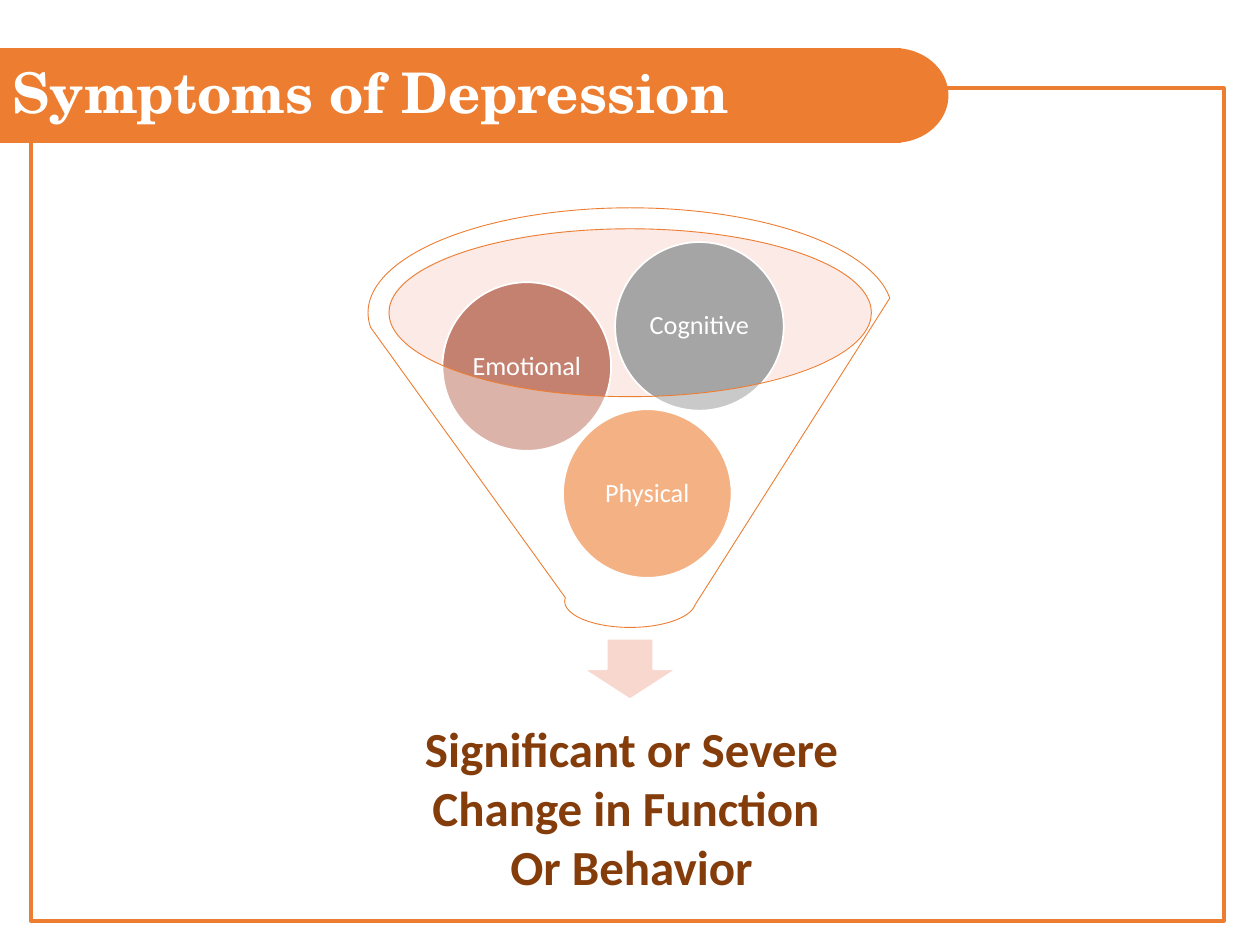
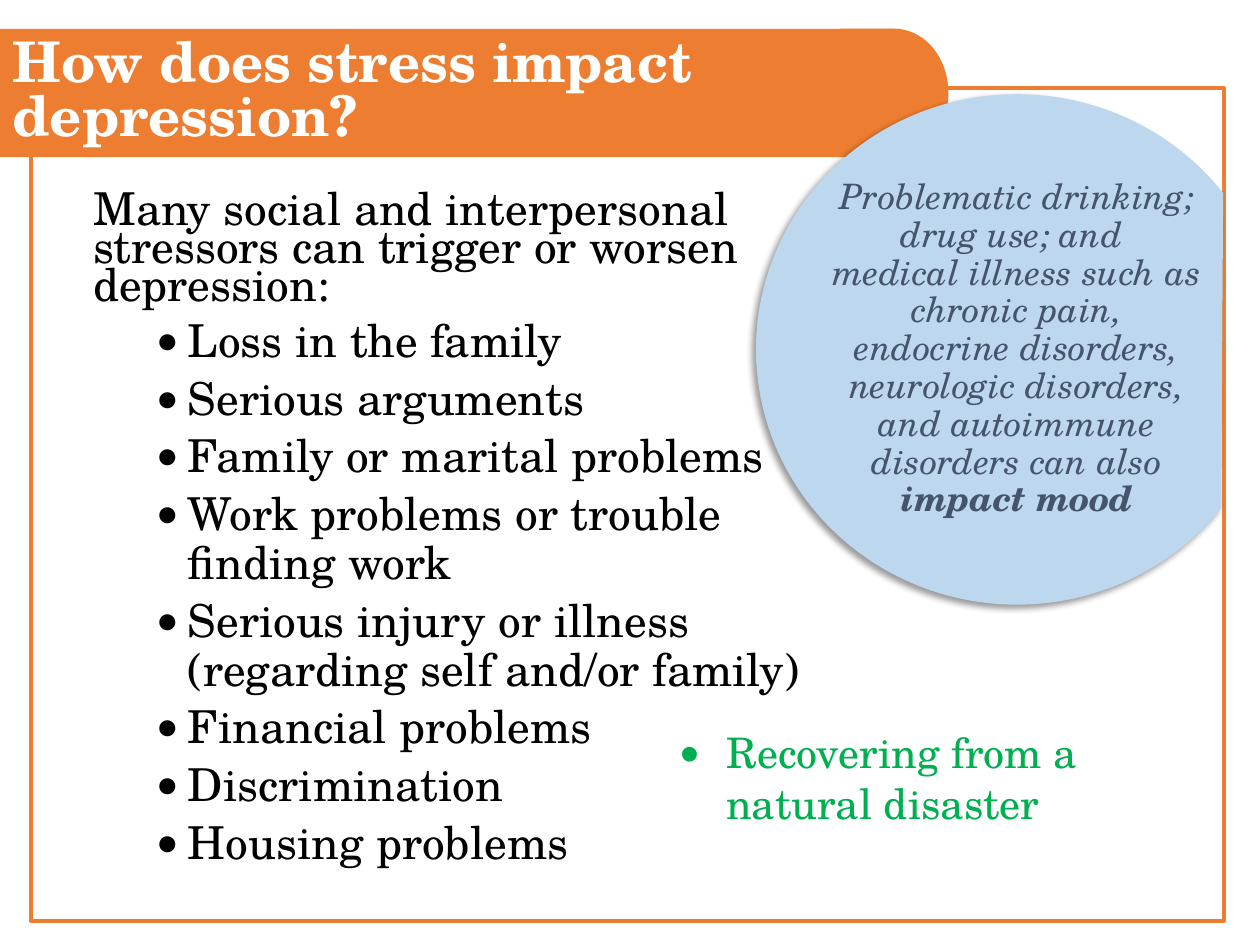
from dataclasses import dataclass
from typing import NamedTuple, Optional

from lxml import etree
from pptx import Presentation
from pptx import util as u
from pptx.dml.color import RGBColor
from pptx.enum import shapes, text
from pptx.oxml import ns

WHITE = RGBColor(0xFF, 0xFF, 0xFF)
BLACK = RGBColor(0x00, 0x00, 0x00)
ORANGE = RGBColor(0xED, 0x7D, 0x31)
ROSE = RGBColor(0xC4, 0x81, 0x70)
GRAY = RGBColor(0xA5, 0xA5, 0xA5)
RIM = RGBColor(0xF6, 0xCC, 0xBE)
BLUSH = RGBColor(0xF8, 0xD7, 0xCE)
BROWN = RGBColor(0x84, 0x3C, 0x0B)
SKY = RGBColor(0xBD, 0xD7, 0xEE)
SLATE = RGBColor(0x44, 0x54, 0x6A)
GREEN = RGBColor(0x00, 0xB0, 0x50)

SERIF = "TeX Gyre Schola"
SANS = "Calibri"
TITLE_ONLY = 5
GEOM = shapes.MSO_SHAPE
CENTER = text.PP_ALIGN.CENTER


class Box(NamedTuple):
    """Left, top, width and height in centimetres."""
    left: float
    top: float
    width: float
    height: float

    def lengths(self) -> list:
        return [u.Cm(v) for v in self]


@dataclass(frozen=True)
class Style:
    font: str
    size: float
    color: RGBColor
    bold: bool = False
    italic: bool = False


@dataclass(frozen=True)
class Ball:
    label: str
    left: float
    top: float
    color: RGBColor


TITLE = Style(SERIF, 32, WHITE, bold=True)
BALL_LABEL = Style(SANS, 15, WHITE)
OUTCOME = Style(SANS, 28, BROWN, bold=True)
BODY = Style(SERIF, 25.9, BLACK)
RECOVERY = Style(SERIF, 24, GREEN)
NOTE = Style(SERIF, 20, SLATE, italic=True)
NOTE_STRONG = Style(SERIF, 20, SLATE, bold=True, italic=True)

FRAME = Box(0.62, 1.78, 24.05, 16.78)
BAND_WIDTH = 18.16
CAP_LEFT, CAP_WIDTH = 16.94, 2.18
BALL_SIZE = 3.4
BALLS = [
    Ball("Physical", 11.35, 8.25, ORANGE),
    Ball("Emotional", 8.92, 5.69, ROSE),
    Ball("Cognitive", 12.4, 4.88, GRAY),
]
STRESSORS = [
    "Loss in the family",
    "Serious arguments",
    "Family or marital problems",
    "Work problems or trouble finding work",
    "Serious injury or illness (regarding self and/or family)",
    "Financial problems",
    "Discrimination",
    "Housing problems",
]


def add_run(p, words: str, style: Style) -> None:
    r = p.add_run()
    r.text = words
    r.font.name = style.font
    r.font.size = u.Pt(style.size)
    r.font.color.rgb = style.color
    r.font.bold = style.bold
    r.font.italic = style.italic


def add_bullet(p, margin: float, hanging: float) -> None:
    pPr = p._p.get_or_add_pPr()
    pPr.set("marL", str(u.Cm(margin)))
    pPr.set("indent", str(-u.Cm(hanging)))
    etree.SubElement(pPr, ns.qn("a:buFont"), typeface=SANS)
    etree.SubElement(pPr, ns.qn("a:buChar"), char="•")


def set_insets(tf, inset: float) -> None:
    tf.margin_left = tf.margin_right = u.Cm(inset)
    tf.margin_top = tf.margin_bottom = u.Cm(inset)


def paint(sp, fill: Optional[RGBColor], line: Optional[RGBColor] = None,
          width: float = 1, alpha: int = 100) -> None:
    """Set fill, its opacity in percent, and outline."""
    if fill is None:
        sp.fill.background()
    else:
        sp.fill.solid()
        sp.fill.fore_color.rgb = fill
        if alpha < 100:
            clr = sp._element.spPr.find(".//" + ns.qn("a:srgbClr"))
            etree.SubElement(clr, ns.qn("a:alpha"), val=str(alpha * 1000))
    if line is None:
        sp.line.fill.background()
    else:
        sp.line.color.rgb = line
        sp.line.width = u.Pt(width)


def add_shape(slide, kind, box: Box, fill: Optional[RGBColor],
              line: Optional[RGBColor] = None, width: float = 1,
              alpha: int = 100):
    sp = slide.shapes.add_shape(kind, *box.lengths())
    sp.shadow.inherit = False
    paint(sp, fill, line, width, alpha)
    return sp


def add_text_frame(slide, box: Box, wrap: bool = True):
    tf = slide.shapes.add_textbox(*box.lengths()).text_frame
    tf.word_wrap = wrap
    return tf


def add_drop_shadow(sp) -> None:
    effects = sp._element.spPr.find(ns.qn("a:effectLst"))
    shadow = etree.SubElement(
        effects, ns.qn("a:outerShdw"), blurRad=str(u.Pt(4)),
        dist=str(u.Pt(3)), dir=str(135 * 60000), algn="tr", rotWithShape="0")
    clr = etree.SubElement(shadow, ns.qn("a:srgbClr"), val=str(BLACK))
    etree.SubElement(clr, ns.qn("a:alpha"), val="40000")


def new_slide(prs, title: str, top: float, height: float, spacing: float):
    """Add a framed slide whose title sits in a round-ended band."""
    slide = prs.slides.add_slide(prs.slide_layouts[TITLE_ONLY])
    add_shape(slide, GEOM.RECTANGLE, FRAME, None, ORANGE, 2.25)
    add_shape(slide, GEOM.FLOWCHART_DELAY,
              Box(CAP_LEFT, top, CAP_WIDTH, height), ORANGE)
    band = slide.shapes.title
    # The band must cover the frame's edges, so it moves in front of them.
    slide.shapes._spTree.append(band._element)
    band.left, band.top, band.width, band.height = Box(
        0, top, BAND_WIDTH, height).lengths()
    paint(band, ORANGE)
    tf = band.text_frame
    tf.auto_size = text.MSO_AUTO_SIZE.NONE
    tf.word_wrap = True
    tf.vertical_anchor = text.MSO_ANCHOR.MIDDLE
    p = tf.paragraphs[0]
    p.alignment = text.PP_ALIGN.LEFT
    p.line_spacing = spacing
    add_run(p, title, TITLE)
    return slide


def add_ball(slide, ball: Ball) -> None:
    sp = add_shape(slide, GEOM.OVAL,
                   Box(ball.left, ball.top, BALL_SIZE, BALL_SIZE),
                   ball.color, WHITE)
    tf = sp.text_frame
    set_insets(tf, 0.05)
    tf.vertical_anchor = text.MSO_ANCHOR.MIDDLE
    p = tf.paragraphs[0]
    p.alignment = CENTER
    p.line_spacing = 0.9
    add_run(p, ball.label, BALL_LABEL)


def build_symptoms(prs) -> None:
    slide = new_slide(prs, "Symptoms of Depression", 0.97, 1.91, 0.9)
    add_shape(slide, GEOM.OVAL, Box(7.82, 4.6, 9.75, 3.38), RIM, alpha=40)
    add_shape(slide, GEOM.DOWN_ARROW, Box(11.76, 12.88, 1.88, 1.22),
              BLUSH, WHITE)
    for ball in BALLS:
        add_ball(slide, ball)
    add_shape(slide, GEOM.FUNNEL, Box(7.42, 4.19, 10.57, 8.46),
              WHITE, ORANGE, 0.5, alpha=40)

    tf = add_text_frame(slide, Box(8.26, 14.36, 8.94, 3.84), wrap=False)
    p = tf.paragraphs[0]
    p.alignment = CENTER
    add_run(p, "Significant or Severe", OUTCOME)
    p.add_line_break()
    add_run(p, "Change in Function ", OUTCOME)
    p = tf.add_paragraph()
    p.alignment = CENTER
    add_run(p, "Or Behavior", OUTCOME)


def add_illness_note(slide) -> None:
    sp = add_shape(slide, GEOM.CHORD, Box(15.24, 1.9, 10.52, 10.29), SKY)
    sp.adjustments[0] = 22.69
    sp.adjustments[1] = 193.71
    add_drop_shadow(sp)
    tf = sp.text_frame
    set_insets(tf, 0)
    tf.vertical_anchor = text.MSO_ANCHOR.MIDDLE
    add_run(tf.paragraphs[0], "Problematic drinking; drug use; and ", NOTE)
    p = tf.add_paragraph()
    add_run(p, "medical illness such as chronic pain, endocrine disorders, "
               "neurologic disorders, and autoimmune disorders can also ", NOTE)
    add_run(p, "impact mood", NOTE_STRONG)
    for p in tf.paragraphs:
        p.alignment = CENTER
        p.line_spacing = 0.9


def build_stress(prs) -> None:
    slide = new_slide(prs, "How does stress impact depression?",
                      0.58, 2.59, 0.8)
    tf = add_text_frame(slide, Box(1.63, 3.81, 15.32, 14.1))
    p = tf.paragraphs[0]
    p.line_spacing = 0.7
    p.space_before = u.Pt(10)
    add_run(p, "Many social and interpersonal stressors can trigger "
               "or worsen depression:", BODY)
    for stressor in STRESSORS:
        p = tf.add_paragraph()
        p.level = 1
        p.line_spacing = 0.9
        p.space_before = u.Pt(5)
        add_bullet(p, 1.91, 0.64)
        add_run(p, stressor, BODY)

    add_illness_note(slide)

    tf = add_text_frame(slide, Box(13.44, 14.53, 11.23, 2.31))
    p = tf.paragraphs[0]
    add_bullet(p, 0.95, 0.95)
    add_run(p, "Recovering from a natural disaster", RECOVERY)


def main() -> None:
    prs = Presentation()
    prs.slide_width, prs.slide_height = u.Cm(25.4), u.Cm(19.05)
    build_symptoms(prs)
    build_stress(prs)
    prs.save("out.pptx")


if __name__ == "__main__":
    main()
